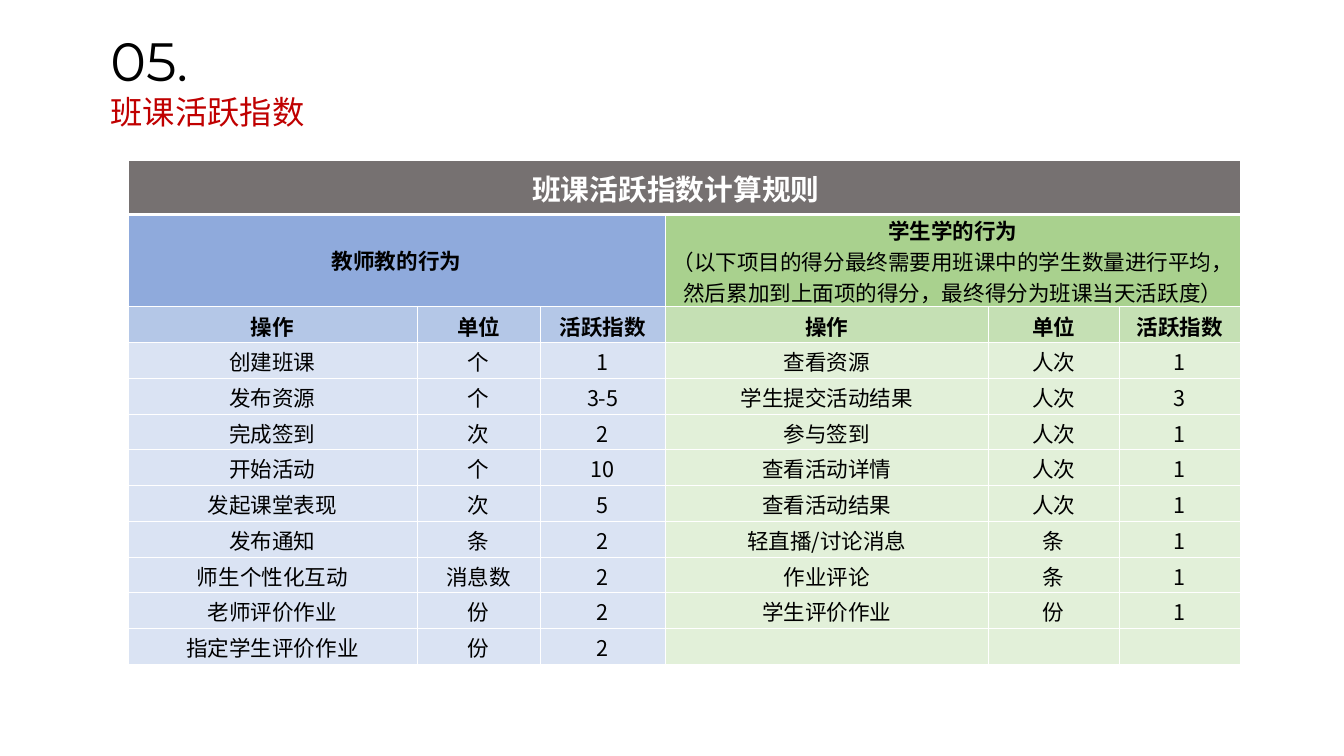
from dataclasses import dataclass

from lxml import etree
from pptx import Presentation
from pptx.dml.color import RGBColor
from pptx.enum.text import MSO_ANCHOR, MSO_AUTO_SIZE, PP_ALIGN
from pptx.oxml.ns import qn
from pptx.table import Table, _Cell
from pptx.util import Inches, Length, Pt

LEFT, CENTER = PP_ALIGN.LEFT, PP_ALIGN.CENTER
TOP, MIDDLE = MSO_ANCHOR.TOP, MSO_ANCHOR.MIDDLE
FIT_SHAPE = MSO_AUTO_SIZE.SHAPE_TO_FIT_TEXT

SLIDE_WIDTH, SLIDE_HEIGHT = Inches(20.79), Inches(11.69)
TITLE_ONLY_LAYOUT = 5
TABLE_FONT = "Noto Sans CJK SC"
COLORS = {
    "black": "000000",
    "white": "FFFFFF",
    "red": "C00000",
    "banner": "767171",
    "teacher_group": "8FAADC",
    "teacher_header": "B4C7E7",
    "teacher_body": "DAE3F3",
    "student_group": "A9D18E",
    "student_header": "C5E0B4",
    "student_body": "E2F0D9",
}

# Shares of the slide's width and height, in percent
COLUMN_SHARES = [21.5, 9.19, 9.28, 24.05, 9.72, 9.04]
BANNER_SHARE, GROUP_SHARE, ROW_SHARE = 7.1, 12.23, 4.73
HEADINGS = ("操作", "单位", "活跃指数")


@dataclass(frozen=True)
class TextRun:
    text: str
    size: int = 24
    bold: bool = False
    color: str = "black"
    font: str = TABLE_FONT


@dataclass(frozen=True)
class BehaviorGroup:
    role: str
    first_column: int
    heading: list[TextRun]
    actions: list[tuple[str, str, str]]


GROUPS = [
    BehaviorGroup("teacher", 0, [TextRun("教师教的行为", bold=True)], [
        ("创建班课", "个", "1"),
        ("发布资源", "个", "3-5"),
        ("完成签到", "次", "2"),
        ("开始活动", "个", "10"),
        ("发起课堂表现", "次", "5"),
        ("发布通知", "条", "2"),
        ("师生个性化互动", "消息数", "2"),
        ("老师评价作业", "份", "2"),
        ("指定学生评价作业", "份", "2"),
    ]),
    BehaviorGroup("student", 3, [
        TextRun("学生学的行为", bold=True),
        TextRun("（以下项目的得分最终需要用班课中的学生数量进行平均，"
                "然后累加到上面项的得分，最终得分为班课当天活跃度）"),
    ], [
        ("查看资源", "人次", "1"),
        ("学生提交活动结果", "人次", "3"),
        ("参与签到", "人次", "1"),
        ("查看活动详情", "人次", "1"),
        ("查看活动结果", "人次", "1"),
        ("轻直播/讨论消息", "条", "1"),
        ("作业评论", "条", "1"),
        ("学生评价作业", "份", "1"),
        ("", "", ""),
    ]),
]


def across(percent: float) -> Length:
    return Length(round(SLIDE_WIDTH * percent / 100))


def down(percent: float) -> Length:
    return Length(round(SLIDE_HEIGHT * percent / 100))


def write_lines(text_frame, lines: list[TextRun], alignment: PP_ALIGN) -> None:
    """Put each run in a paragraph of its own."""
    for index, line in enumerate(lines):
        paragraph = text_frame.paragraphs[0] if index == 0 else text_frame.add_paragraph()
        paragraph.alignment = alignment
        paragraph.line_spacing = 1.0
        paragraph.space_before = Pt(0)
        run = paragraph.add_run()
        run.text = line.text
        run.font.size = Pt(line.size)
        run.font.bold = line.bold
        run.font.name = line.font
        run.font.color.rgb = RGBColor.from_string(COLORS[line.color])
        east_asian = etree.SubElement(run.font._element, qn("a:ea"))
        east_asian.set("typeface", line.font)


def add_border(cell: _Cell, side: str, width: int) -> None:
    line = etree.SubElement(cell._tc.get_or_add_tcPr(), qn(f"a:ln{side}"), w=str(Pt(width)))
    fill = etree.SubElement(line, qn("a:solidFill"))
    etree.SubElement(fill, qn("a:srgbClr"), val=COLORS["white"])


def fill_cell(cell: _Cell, lines: list[TextRun], color: str, anchor: MSO_ANCHOR) -> None:
    cell.fill.solid()
    cell.fill.fore_color.rgb = RGBColor.from_string(COLORS[color])
    cell.vertical_anchor = anchor
    cell.margin_left = cell.margin_right = Inches(0.05)
    cell.margin_top = Inches(0.05 if anchor == TOP else 0)
    cell.margin_bottom = 0
    if lines[0].text:
        write_lines(cell.text_frame, lines, CENTER)


def add_group(table: Table, group: BehaviorGroup) -> None:
    first = group.first_column
    heading = table.cell(1, first)
    heading.merge(table.cell(1, first + len(HEADINGS) - 1))
    fill_cell(heading, group.heading, f"{group.role}_group", MIDDLE)
    for row, values in enumerate([HEADINGS, *group.actions], start=2):
        is_header = row == 2
        color = f"{group.role}_{'header' if is_header else 'body'}"
        for column, value in enumerate(values, start=first):
            fill_cell(table.cell(row, column), [TextRun(value, bold=is_header)], color, TOP)


def add_rules_table(slide) -> None:
    row_shares = [BANNER_SHARE, GROUP_SHARE] + [ROW_SHARE] * (1 + len(GROUPS[0].actions))
    table = slide.shapes.add_table(
        len(row_shares), len(COLUMN_SHARES), across(9.52), down(21.25),
        across(sum(COLUMN_SHARES)), down(sum(row_shares))).table
    table.first_row = table.horz_banding = False
    for column, share in zip(table.columns, COLUMN_SHARES):
        column.width = across(share)
    for index, (row, share) in enumerate(zip(table.rows, row_shares)):
        row.height = down(share)
        for cell in row.cells:
            for side in "LRTB":
                under_banner = (index, side) in ((0, "B"), (1, "T"))
                add_border(cell, side, 3 if under_banner else 1)

    banner = table.cell(0, 0)
    banner.merge(table.cell(0, len(COLUMN_SHARES) - 1))
    fill_cell(banner, [TextRun("班课活跃指数计算规则", 32, True, "white")], "banner", MIDDLE)
    banner.margin_right = Inches(0.3)
    for group in GROUPS:
        add_group(table, group)


def add_title(slide) -> None:
    title = slide.shapes.title
    title.left, title.top = across(7.74), down(3.25)
    title.width, title.height = across(21.26), down(14.71)
    text_frame = title.text_frame
    text_frame.word_wrap = True
    text_frame.auto_size = FIT_SHAPE
    text_frame.vertical_anchor = TOP
    write_lines(text_frame, [
        TextRun("05.", 60, font="Montserrat"),
        TextRun("班课活跃指数", 36, color="red", font="Roboto"),
    ], LEFT)


def main() -> None:
    presentation = Presentation()
    presentation.slide_width, presentation.slide_height = SLIDE_WIDTH, SLIDE_HEIGHT
    slide = presentation.slides.add_slide(presentation.slide_layouts[TITLE_ONLY_LAYOUT])
    add_title(slide)
    add_rules_table(slide)
    presentation.save("out.pptx")


if __name__ == "__main__":
    main()
